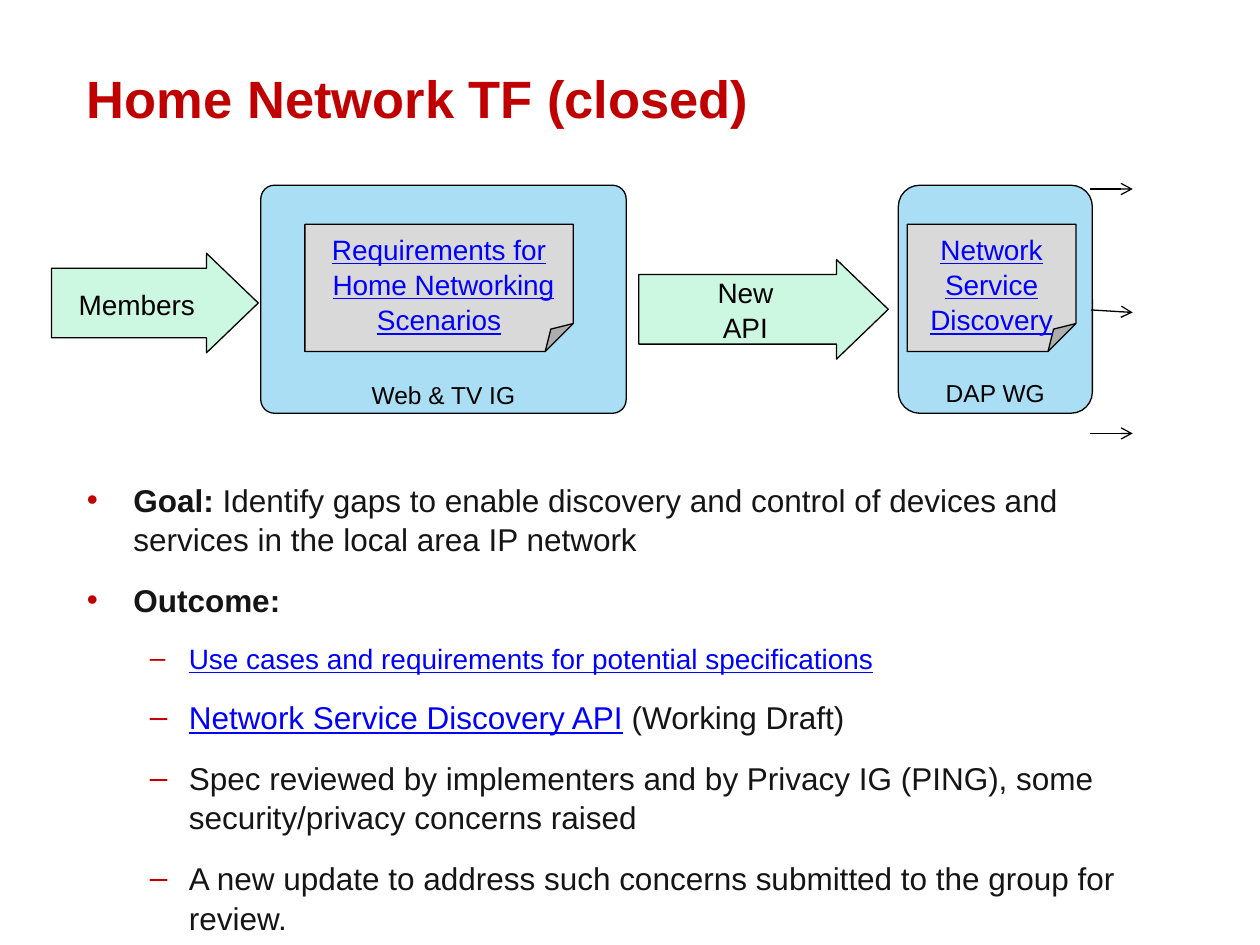
from lxml.etree import SubElement
from pptx import Presentation
from pptx.dml.color import RGBColor
from pptx.enum.shapes import MSO_CONNECTOR as Connector, MSO_SHAPE as Shape
from pptx.enum.text import MSO_ANCHOR as Anchor, MSO_AUTO_SIZE as AutoSize, PP_ALIGN as Align
from pptx.oxml.ns import qn
from pptx.util import Inches, Pt

COLORS = {
    "title": "C00000", "text": "151515", "link": "0000FF", "black": "000000",
    "group": "AADEF4", "flow": "CCF7E1", "document": "D9D9D9",
}
LINE_SPACING = 1.05


def add_run(paragraph, text, size, color, bold=False):
    """Append a run; link-coloured text is underlined."""
    run = paragraph.add_run()
    run.text = text
    font = run.font
    font.name, font.size, font.bold = "Arial", Pt(size), bold
    font.color.rgb = RGBColor.from_string(COLORS[color])
    font.underline = color == "link"


def set_indent(paragraph, margin, hanging):
    """Set a hanging indent in inches and return the paragraph properties."""
    props = paragraph._p.get_or_add_pPr()
    props.set("marL", str(Inches(margin)))
    props.set("indent", str(-Inches(hanging)))
    return props


prs = Presentation()
prs.slide_width, prs.slide_height = Inches(10), Inches(7.5)
slide = prs.slides.add_slide(prs.slide_layouts[5])
LEFT, WIDTH = Inches(0.59), Inches(8.82)

# Title
title = slide.shapes.title
title.left, title.top, title.width, title.height = LEFT, Inches(0.47), WIDTH, Inches(0.61)
title.text_frame.auto_size = AutoSize.NONE
title.text_frame.vertical_anchor = Anchor.MIDDLE
heading = title.text_frame.paragraphs[0]
heading.alignment = Align.LEFT
add_run(heading, "Home Network TF (closed)", 30, "title", bold=True)

# Goal and outcome: (level, [(text, size, colour, bold), ...])
points = [
    (0, [("Goal:", 18, "text", True),
         (" Identify gaps to enable discovery and control of devices and "
          "services in the local area IP network", 18, "text", False)]),
    (0, [("Outcome:", 18, "text", True)]),
    (1, [("Use cases and requirements for potential specifications", 16, "link", False)]),
    (1, [("Network Service Discovery API", 18, "link", False),
         (" (Working Draft)", 18, "text", False)]),
    (1, [("Spec reviewed by implementers and by Privacy IG (PING), some "
          "security/privacy concerns raised", 18, "text", False)]),
    (1, [("A new update to address such concerns submitted to the group for "
          "review.", 18, "text", False)]),
]
BULLETS = [("•", 0.37, 0.37), ("–", 0.81, 0.31)]
body = slide.shapes.add_textbox(LEFT, prs.slide_height // 2, WIDTH, prs.slide_height // 2).text_frame
body.word_wrap = True
for i, (level, runs) in enumerate(points):
    point = body.add_paragraph() if i else body.paragraphs[0]
    point.level = level
    point.space_before = point.space_after = Pt(6)
    point.line_spacing = LINE_SPACING
    mark, margin, hanging = BULLETS[level]
    props = set_indent(point, margin, hanging)
    mark_color = SubElement(props, qn("a:buClr"))
    SubElement(mark_color, qn("a:srgbClr")).set("val", COLORS["title"])
    SubElement(props, qn("a:buFont")).set("typeface", "Arial")
    SubElement(props, qn("a:buChar")).set("char", mark)
    for run in runs:
        add_run(point, *run)

# Process diagram: each kind has one look, each part its own place and lines
KINDS = {
    "group": (Shape.ROUNDED_RECTANGLE, Anchor.BOTTOM, 14, "black", 0, 0),
    "flow": (Shape.RIGHT_ARROW, Anchor.MIDDLE, 16, "black", 0, 0),
    "document": (Shape.FOLDED_CORNER, Anchor.MIDDLE, 16, "link", 0.3, 0.15),
}
GROUP_ROW, DOCUMENT_ROW = (1.47, 1.81), (1.78, 1.01)
FLOW_ADJUST, FOLD_ADJUST = {"adj1": 0.7, "adj2": 0.52}, {"adj": 0.22}
parts = [
    ("group", 2.07, 2.9, GROUP_ROW, {"adj": 0.06}, ["Web & TV IG"]),
    ("flow", 0.41, 1.64, (2.01, 0.79), FLOW_ADJUST, ["Members"]),
    ("group", 7.13, 1.54, GROUP_ROW, {"adj": 0.11}, ["DAP WG"]),
    ("document", 2.42, 2.13, DOCUMENT_ROW, FOLD_ADJUST,
     ["Requirements for Home Networking", "Scenarios"]),
    ("flow", 5.07, 1.98, (2.06, 0.79), FLOW_ADJUST, ["New", "API"]),
    ("document", 7.2, 1.34, DOCUMENT_ROW, FOLD_ADJUST, ["Network", "Service", "Discovery"]),
]
for kind, left, width, (top, height), adjusts, lines in parts:
    preset, anchor, size, color, inset_top, inset_bottom = KINDS[kind]
    part = slide.shapes.add_shape(preset, Inches(left), Inches(top), Inches(width), Inches(height))
    # Written as XML because the folded corner exposes no adjustments
    guides = part._element.spPr.find(qn("a:prstGeom")).get_or_add_avLst()
    guides[:] = []
    for guide_name, share in adjusts.items():
        guide = SubElement(guides, qn("a:gd"))
        guide.set("name", guide_name)
        guide.set("fmla", f"val {round(share * 100000)}")
    part.shadow.inherit = False
    part.fill.solid()
    part.fill.fore_color.rgb = RGBColor.from_string(COLORS[kind])
    part.line.color.rgb = RGBColor.from_string(COLORS["black"])
    part.line.width = Pt(0.75)
    label = part.text_frame
    label.word_wrap = True
    label.vertical_anchor = anchor
    label.margin_left = label.margin_right = 0
    label.margin_top, label.margin_bottom = Inches(inset_top), Inches(inset_bottom)
    for i, text in enumerate(lines):
        line = label.add_paragraph() if i else label.paragraphs[0]
        line.alignment = Align.CENTER
        line.line_spacing = LINE_SPACING
        set_indent(line, 0.07, 0.07)
        add_run(line, text, size, color)

# Outgoing arrows
OUT_END = 8.99
for start, start_y, end_y in [(8.65, 1.5, 1.5), (8.65, 3.44, 3.44), (8.66, 2.46, 2.48)]:
    output = slide.shapes.add_connector(
        Connector.STRAIGHT, Inches(start), Inches(start_y), Inches(OUT_END), Inches(end_y))
    output.line.color.rgb = RGBColor.from_string(COLORS["black"])
    output.line.width = Pt(0.75)
    SubElement(output.line._get_or_add_ln(), qn("a:tailEnd")).set("type", "arrow")
    SubElement(output._element.spPr, qn("a:effectLst"))

prs.save("out.pptx")
